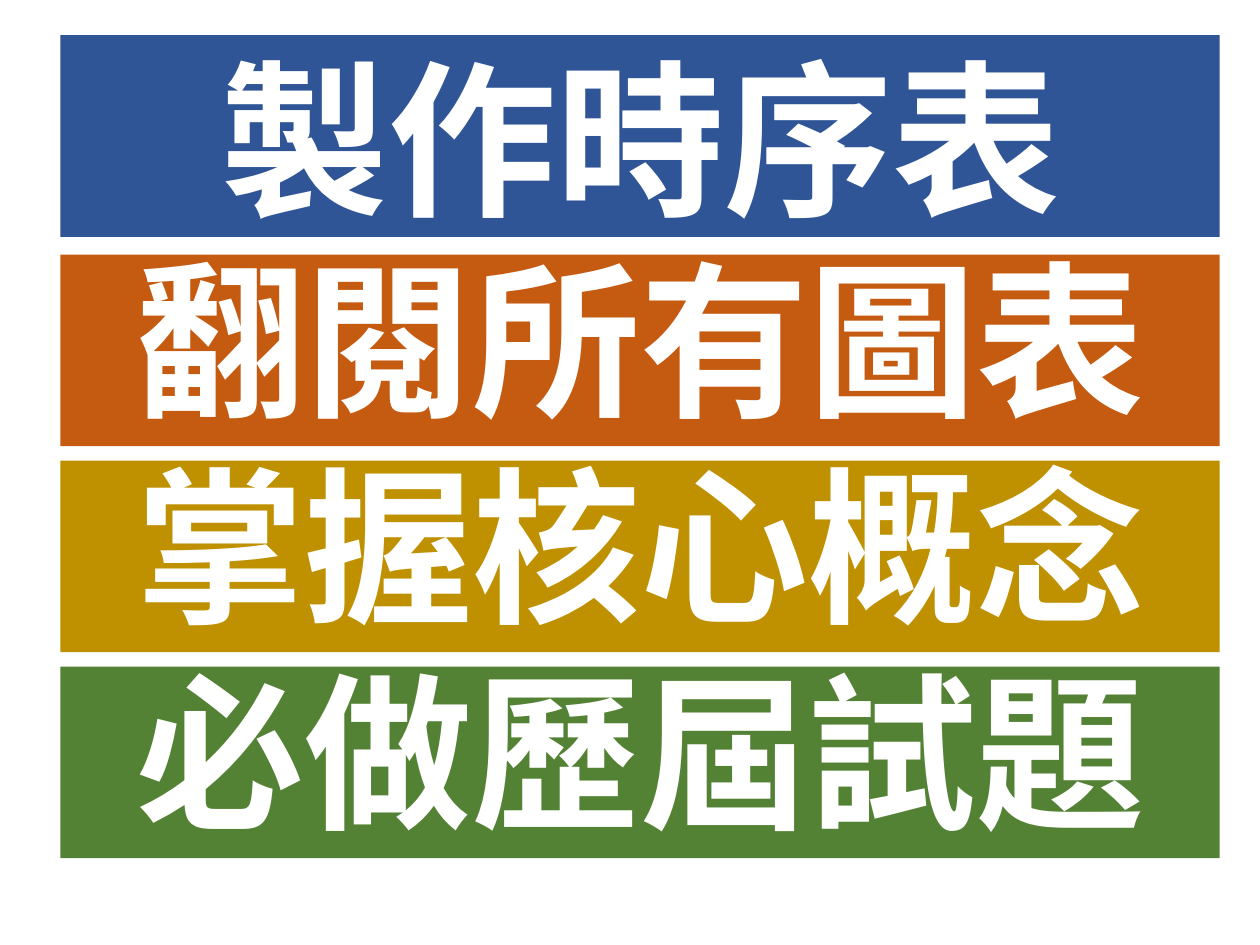
from dataclasses import dataclass

from lxml import etree
from pptx import Presentation
from pptx import util as u
from pptx.dml.color import RGBColor
from pptx.enum import shapes, text
from pptx.oxml import ns
from pptx.slide import Slide

BLUE = RGBColor(0x2F, 0x55, 0x97)
ORANGE = RGBColor(0xC5, 0x5A, 0x11)
GOLD = RGBColor(0xBF, 0x90, 0x00)
GREEN = RGBColor(0x54, 0x82, 0x35)
WHITE = RGBColor(0xFF, 0xFF, 0xFF)

FONT = "Noto Sans CJK SC"
LEFT, WIDTH = 0.48, 9.2
TITLE_TOP, TITLE_HEIGHT = 0.28, 1.6
STEP_TOP, STEP_HEIGHT, STEP_PITCH = 2.02, 1.52, 1.635


@dataclass(frozen=True)
class Banner:
    label: str
    color: RGBColor
    top: float
    height: float = STEP_HEIGHT
    line_spacing: float = 0.9
    space_before: int = 10


STEPS = [("翻閱所有圖表", ORANGE), ("掌握核心概念", GOLD), ("必做歷屆試題", GREEN)]
BANNERS = [Banner("製作時序表", BLUE, TITLE_TOP, TITLE_HEIGHT, 1.0, 0)] + [
    Banner(label, color, STEP_TOP + index * STEP_PITCH)
    for index, (label, color) in enumerate(STEPS)
]


def draw_banner(slide: Slide, banner: Banner) -> None:
    shape = slide.shapes.add_shape(
        shapes.MSO_SHAPE.RECTANGLE,
        u.Inches(LEFT), u.Inches(banner.top), u.Inches(WIDTH), u.Inches(banner.height),
    )
    shape.shadow.inherit = False
    shape.fill.solid()
    shape.fill.fore_color.rgb = banner.color
    shape.line.fill.background()

    frame = shape.text_frame
    frame.text = banner.label
    frame.word_wrap = True
    frame.vertical_anchor = text.MSO_ANCHOR.MIDDLE
    paragraph = frame.paragraphs[0]
    paragraph.alignment = text.PP_ALIGN.CENTER
    paragraph.line_spacing = banner.line_spacing
    paragraph.space_before = u.Pt(banner.space_before)

    run = paragraph.runs[0]
    run.font.size = u.Pt(96)
    run.font.bold = True
    run.font.color.rgb = WHITE
    run.font.name = FONT
    east_asian = etree.SubElement(run._r.get_or_add_rPr(), ns.qn("a:ea"))
    east_asian.set("typeface", FONT)


def main() -> None:
    presentation = Presentation()
    presentation.slide_width = u.Inches(10)
    presentation.slide_height = u.Inches(7.5)
    slide = presentation.slides.add_slide(presentation.slide_layouts[6])
    for banner in BANNERS:
        draw_banner(slide, banner)
    presentation.save("out.pptx")


if __name__ == "__main__":
    main()
